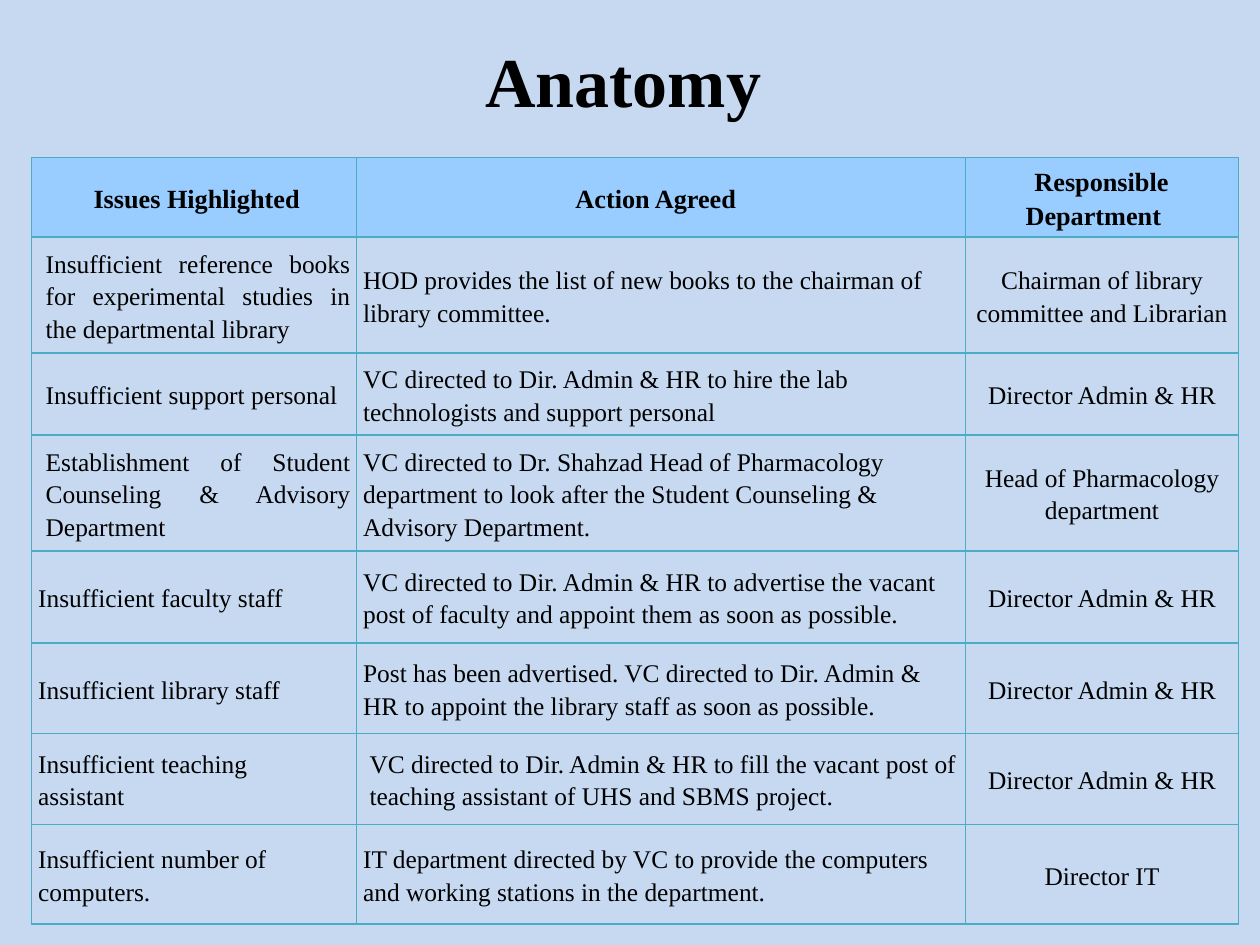
from lxml import etree
from pptx import Presentation
from pptx.dml.color import RGBColor
from pptx.enum.text import MSO_ANCHOR, PP_ALIGN
from pptx.oxml.ns import qn
from pptx.util import Cm, Pt

LEFT, CENTER, JUSTIFY = PP_ALIGN.LEFT, PP_ALIGN.CENTER, PP_ALIGN.JUSTIFY
MIDDLE = MSO_ANCHOR.MIDDLE

COLORS = {"background": "C6D9F1", "header": "99CCFF", "border": "4BACC6", "text": "000000"}
FONT = "Times New Roman"

COLUMN_WIDTHS = [6.55, 12.27, 5.51]
ROW_HEIGHTS = [1.6, 2.34, 1.65, 2.34, 1.85, 1.83, 1.83, 2.01]

# Each header line: text, left indent, right indent (cm), space before (pt)
HEADERS = [
    [("Issues Highlighted", 1.07, 0.97, 0)],
    [("Action Agreed", 0.81, 1.02, 0)],
    [("Responsible", 0.69, 0.71, 4.2), ("Department", 0.51, 0.86, 0)],
]
ROWS = [
    ("Insufficient reference books for experimental studies in the departmental library",
     "HOD provides the list of new books to the chairman of library committee.",
     "Chairman of library committee and Librarian"),
    ("Insufficient support personal",
     "VC directed to Dir. Admin & HR to hire the lab technologists and support personal",
     "Director Admin & HR"),
    ("Establishment of Student Counseling & Advisory Department",
     "VC directed to Dr. Shahzad Head of Pharmacology department to look after "
     "the Student Counseling & Advisory Department.",
     "Head of Pharmacology department"),
    ("Insufficient faculty staff",
     "VC directed to Dir. Admin & HR to advertise the vacant post of faculty "
     "and appoint them as soon as possible.",
     "Director Admin & HR"),
    ("Insufficient library staff",
     "Post has been advertised. VC directed to Dir. Admin & HR to appoint "
     "the library staff as soon as possible.",
     "Director Admin & HR"),
    ("Insufficient teaching assistant",
     "VC directed to Dir. Admin & HR to fill the vacant post of teaching "
     "assistant of UHS and SBMS project.",
     "Director Admin & HR"),
    ("Insufficient number of computers.",
     "IT department directed by VC to provide the computers and working "
     "stations in the department.",
     "Director IT"),
]
JUSTIFIED_ROWS = 3
# Body cells with their own indents: (row, column) -> left, right (cm)
INDENTS = {(6, 0): (0, 1), (6, 1): (0.13, 0)}


class SlideBuilder:
    def __init__(self, presentation):
        self.slide = presentation.slides.add_slide(presentation.slide_layouts[5])
        self.fill(self.slide.background, "background")

    def fill(self, target, color):
        target.fill.solid()
        target.fill.fore_color.rgb = RGBColor.from_string(COLORS[color])

    def style_font(self, font, size, bold=False):
        font.name, font.size, font.bold = FONT, Pt(size), bold
        font.color.rgb = RGBColor.from_string(COLORS["text"])

    def title(self, text, left, top, width, height):
        title = self.slide.shapes.title
        title.left, title.top, title.width, title.height = map(Cm, (left, top, width, height))
        title.text_frame.vertical_anchor = MIDDLE
        paragraph = title.text_frame.paragraphs[0]
        paragraph.alignment = CENTER
        for content, size in ((text, 40), (" ", 32)):
            run = paragraph.add_run()
            run.text = content
            self.style_font(run.font, size, bold=True)

    def table(self, left, top):
        frame = self.slide.shapes.add_table(
            len(ROW_HEIGHTS), len(COLUMN_WIDTHS), Cm(left), Cm(top),
            Cm(sum(COLUMN_WIDTHS)), Cm(sum(ROW_HEIGHTS)))
        table = frame.table
        table.horz_banding = False
        for column, width in zip(table.columns, COLUMN_WIDTHS):
            column.width = Cm(width)
        for row, height in zip(table.rows, ROW_HEIGHTS):
            row.height = Cm(height)
        return table

    def cell(self, cell, lines, alignment, size, bold=False, fill=None):
        cell.vertical_anchor = MIDDLE
        cell.margin_left = cell.margin_right = Cm(0.13)
        cell.margin_top = cell.margin_bottom = 0
        self.borders(cell)
        if fill:
            self.fill(cell, fill)
        else:
            cell.fill.background()
        cell.text = "\n".join(line[0] for line in lines)
        for paragraph, (_, left, right, before) in zip(cell.text_frame.paragraphs, lines):
            paragraph.alignment = alignment
            paragraph.line_spacing = 1.15
            paragraph.space_before = Pt(before)
            self.style_font(paragraph.font, size, bold)
            for run in paragraph.runs:
                self.style_font(run.font, size, bold)
            properties = paragraph._p.get_or_add_pPr()
            properties.set("marL", str(Cm(left)))
            properties.set("marR", str(Cm(right)))

    def borders(self, cell):
        """Draw all four sides; call before filling, as lines precede the fill."""
        properties = cell._tc.get_or_add_tcPr()
        for side in ("a:lnL", "a:lnR", "a:lnT", "a:lnB"):
            line = etree.SubElement(properties, qn(side), w=str(Pt(1)))
            solid = etree.SubElement(line, qn("a:solidFill"))
            etree.SubElement(solid, qn("a:srgbClr"), val=COLORS["border"])


def main():
    presentation = Presentation()
    presentation.slide_width, presentation.slide_height = Cm(25.4), Cm(19.05)
    builder = SlideBuilder(presentation)
    builder.title("Anatomy", 0.64, 0.43, 24.13, 2.34)
    table = builder.table(0.64, 3.18)
    for column, lines in enumerate(HEADERS):
        builder.cell(table.cell(0, column), lines, CENTER, 15, bold=True, fill="header")
    for row, texts in enumerate(ROWS, start=1):
        for column, text in enumerate(texts):
            alignment = (LEFT, LEFT, CENTER)[column]
            left, right = INDENTS.get((row, column), (0, 0))
            before = 0
            if column == 0 and row <= JUSTIFIED_ROWS:
                alignment, left, before = JUSTIFY, 0.15, 0.8
            builder.cell(table.cell(row, column), [(text, left, right, before)], alignment, 14.5)
    presentation.save("out.pptx")


if __name__ == "__main__":
    main()
